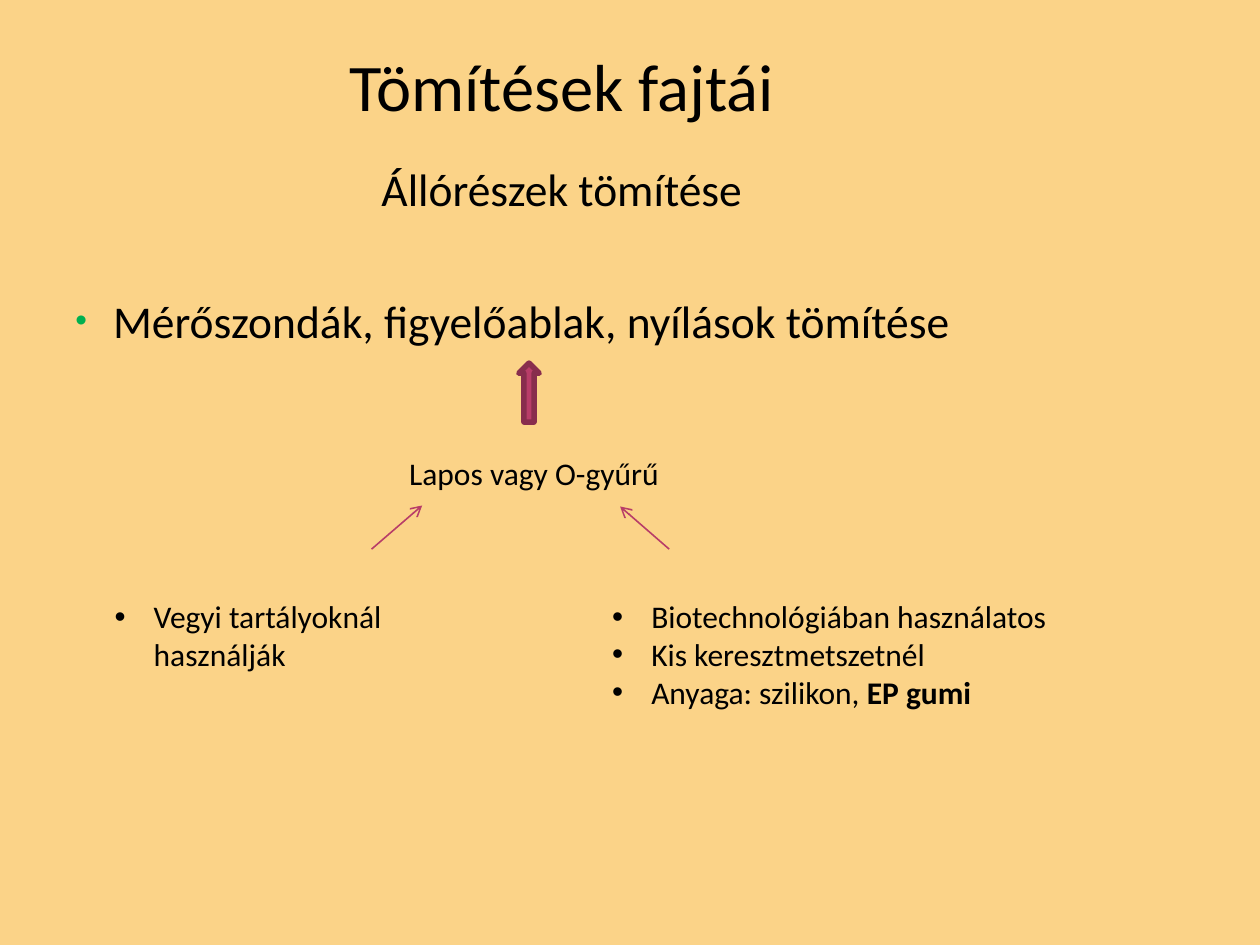
from pptx import Presentation
from pptx import util as u
from pptx.dml.color import RGBColor
from pptx.enum import shapes, text
from pptx.oxml.ns import qn
from lxml import etree

BLACK, PINK, DARK_PINK, GREEN = "000000", "B83D68", "882D4D", "00B050"


def rgb(value):
    return RGBColor.from_string(value)


def add_text(box, paras, size, margins=(0.25, 0.13), anchor=text.MSO_ANCHOR.TOP):
    """Each paragraph is (runs, format dict); runs are (text, bold) pairs."""
    tf = s.shapes.add_textbox(*[u.Cm(v) for v in box]).text_frame
    side, top = [u.Cm(m) for m in margins]
    frame = dict(word_wrap=True, vertical_anchor=anchor, margin_left=side,
                 margin_right=side, margin_top=top, margin_bottom=top)
    for name, value in frame.items():
        setattr(tf, name, value)
    for i, (runs, fmt) in enumerate(paras):
        p = tf.add_paragraph() if i else tf.paragraphs[0]
        fmt = dict(fmt)
        indent = fmt.pop("indent", None)
        color, scale = fmt.pop("bullet", (BLACK, 100))
        if indent:
            pPr = p._p.get_or_add_pPr()
            pPr.set("marL", str(u.Cm(indent)))
            pPr.set("indent", str(-u.Cm(indent)))
            clr = etree.SubElement(pPr, qn("a:buClr"))
            etree.SubElement(clr, qn("a:srgbClr"), val=color)
            etree.SubElement(pPr, qn("a:buSzPct"), val=str(scale * 1000))
            etree.SubElement(pPr, qn("a:buFont"), typeface="Arial")
            etree.SubElement(pPr, qn("a:buChar"), char="•")
        for name, value in fmt.items():
            setattr(p, name, value)
        for words, bold in runs:
            r = p.add_run()
            r.text = words
            for name, value in dict(name="Calibri", size=u.Pt(size), bold=bold).items():
                setattr(r.font, name, value)
            r.font.color.rgb = rgb(BLACK)


prs = Presentation()
prs.slide_width, prs.slide_height = u.Cm(25.4), u.Cm(19.05)
s = prs.slides.add_slide(prs.slide_layouts[6])
s.background.fill.solid()
s.background.fill.fore_color.rgb = rgb("FBD388")

# Title and main text
centred = dict(alignment=text.PP_ALIGN.CENTER)
add_text((1.27, 0.89, 20.12, 1.63), [([("Tömítések fajtái", False)], centred)],
         38, (0.13, 0), text.MSO_ANCHOR.BOTTOM)
add_text((1.27, 3.12, 20.12, 14.81), [
    ([("Állórészek tömítése", False)], centred),
    ([("Mérőszondák, figyelőablak, nyílások tömítése", False)],
     dict(indent=0.76, bullet=(GREEN, 73), space_before=u.Pt(44))),
], 26)

# Block arrow up to the main text
sp = s.shapes.add_shape(shapes.MSO_SHAPE.UP_ARROW,
                        u.Cm(10.46), u.Cm(7.32), u.Cm(0.41), u.Cm(1.19))
sp.shadow.inherit = False
sp.fill.solid()
sp.fill.fore_color.rgb = rgb(PINK)
sp.line.color.rgb = rgb(DARK_PINK)
sp.line.width = u.Pt(3.15)

# Seal types
add_text((8, 9.02, 5.79, 1.02), [([("Lapos vagy O-gyűrű", False)], {})], 18)

# Thin arrows from the two lists
for ends in [(7.49, 11.07, 8.51, 10.19), (13.49, 11.07, 12.5, 10.21)]:
    cxn = s.shapes.add_connector(shapes.MSO_CONNECTOR.STRAIGHT, *[u.Cm(v) for v in ends])
    cxn.line.color.rgb = rgb(PINK)
    cxn.line.width = u.Pt(0.9)
    etree.SubElement(cxn.line._get_or_add_ln(), qn("a:tailEnd"), type="arrow")
    etree.SubElement(cxn._element.spPr, qn("a:effectLst"))

# Lists of uses
lists = [
    (2.06, 7.49, [[("Vegyi tartályoknál használják", False)]]),
    (12.09, 10.8, [[("Biotechnológiában használatos", False)],
                   [("Kis keresztmetszetnél", False)],
                   [("Anyaga: szilikon, ", False), ("EP gumi", True)]]),
]
for left, width, items in lists:
    add_text((left, 11.91, width, 2.57), [(runs, dict(indent=0.79)) for runs in items], 18)

prs.save("out.pptx")
